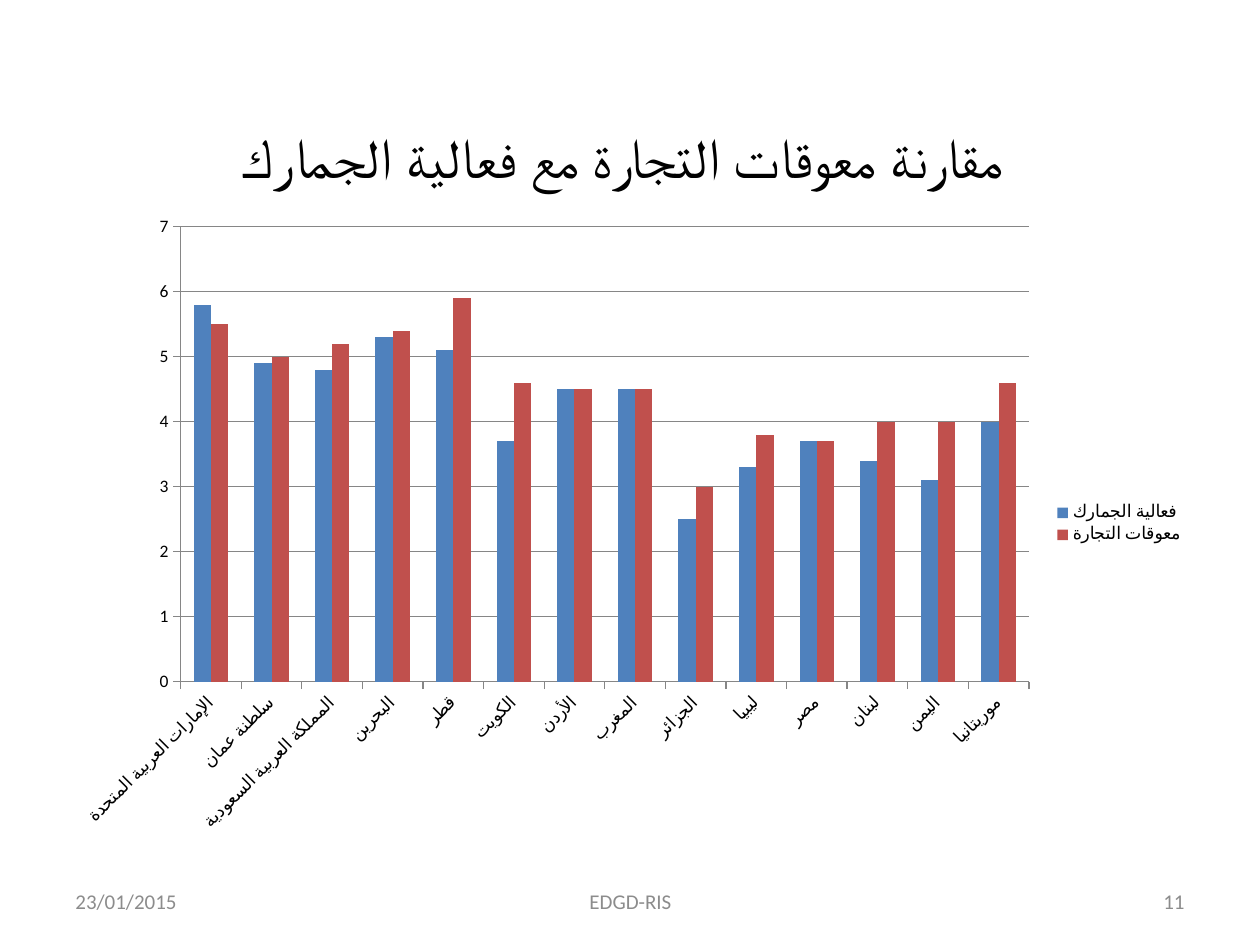
from dataclasses import dataclass

from pptx import Presentation
from pptx.chart.data import CategoryChartData
from pptx.dml.color import RGBColor
from pptx.enum.chart import XL_CHART_TYPE, XL_LEGEND_POSITION, XL_TICK_MARK
from pptx.enum.text import MSO_ANCHOR, PP_ALIGN
from pptx.util import Emu, Pt

COLUMNS = XL_CHART_TYPE.COLUMN_CLUSTERED
LEGEND_RIGHT = XL_LEGEND_POSITION.RIGHT
TICK_OUT = XL_TICK_MARK.OUTSIDE
MIDDLE, BOTTOM = MSO_ANCHOR.MIDDLE, MSO_ANCHOR.BOTTOM
LEFT, CENTER, RIGHT = PP_ALIGN.LEFT, PP_ALIGN.CENTER, PP_ALIGN.RIGHT

PX_PER_INCH = 126
FONT = "Calibri"
COLORS = {
    "text": "000000",
    "footer": "8C8C8C",
    "axis": "868686",
    "customs": "4F81BD",
    "barriers": "C0504D",
}


@dataclass(frozen=True)
class Label:
    text: str
    x: int
    y: int
    w: int
    h: int
    align: PP_ALIGN
    size: int = 12
    color: str = "footer"
    anchor: MSO_ANCHOR = MIDDLE


@dataclass(frozen=True)
class Series:
    name: str
    color: str
    values: tuple[float, ...]


FOOTER_Y, FOOTER_H = 876, 50
LABELS = (
    Label("مقارنة معوقات التجارة مع فعالية الجمارك ", 63, 38, 1134, 158,
          CENTER, 32, "text", BOTTOM),
    Label("23/01/2015", 63, FOOTER_Y, 294, FOOTER_H, LEFT),
    Label("EDGD-RIS", 431, FOOTER_Y, 399, FOOTER_H, CENTER),
    Label("11", 903, FOOTER_Y, 294, FOOTER_H, RIGHT),
)

COUNTRIES = (
    "الإمارات العربية المتحدة", "سلطنة عمان", "المملكة العربية السعودية",
    "البحرين", "قطر", "الكويت", "الأردن", "المغرب", "الجزائر", "ليبيا",
    "مصر", "لبنان", "اليمن", "موريتانيا",
)
SERIES = (
    Series("فعالية الجمارك", "customs",
           (5.8, 4.9, 4.8, 5.3, 5.1, 3.7, 4.5, 4.5, 2.5, 3.3, 3.7, 3.4, 3.1, 4)),
    Series("معوقات التجارة", "barriers",
           (5.5, 5, 5.2, 5.4, 5.9, 4.6, 4.5, 4.5, 3, 3.8, 3.7, 4, 4, 4.6)),
)


def px(n: int) -> Emu:
    return Emu(round(n * 914400 / PX_PER_INCH))


def rgb(name: str) -> RGBColor:
    return RGBColor.from_string(COLORS[name])


def style_font(font, size: int, color: str) -> None:
    font.name = FONT
    font.size = Pt(size)
    font.color.rgb = rgb(color)


def add_label(slide, label: Label) -> None:
    box = slide.shapes.add_textbox(px(label.x), px(label.y), px(label.w), px(label.h))
    tf = box.text_frame
    tf.word_wrap = True
    tf.vertical_anchor = label.anchor
    tf.text = label.text
    p = tf.paragraphs[0]
    p.alignment = label.align
    style_font(p.runs[0].font, label.size, label.color)


def style_line(line) -> None:
    line.color.rgb = rgb("axis")
    line.width = Pt(0.75)


def add_country_chart(slide) -> None:
    data = CategoryChartData()
    data.categories = COUNTRIES
    for series in SERIES:
        data.add_series(series.name, series.values)
    chart = slide.shapes.add_chart(
        COLUMNS, px(63), px(204), px(1134), px(640), data).chart
    style_font(chart.font, 10, "text")
    chart.has_title = False
    chart.has_legend = True
    chart.legend.position = LEGEND_RIGHT
    chart.legend.include_in_layout = False

    plot = chart.plots[0]
    plot.gap_width = 150
    plot.overlap = 0
    plot.vary_by_categories = False
    for bars, series in zip(plot.series, SERIES):
        bars.format.fill.solid()
        bars.format.fill.fore_color.rgb = rgb(series.color)

    for axis in (chart.category_axis, chart.value_axis):
        axis.major_tick_mark = TICK_OUT
        style_line(axis.format.line)
    value_axis = chart.value_axis
    value_axis.minimum_scale, value_axis.maximum_scale = 0, 7
    value_axis.major_unit = 1
    value_axis.has_major_gridlines = True
    style_line(value_axis.major_gridlines.format.line)


def main() -> None:
    prs = Presentation()
    prs.slide_width, prs.slide_height = px(1260), px(945)
    slide = prs.slides.add_slide(prs.slide_layouts[6])
    for label in LABELS:
        add_label(slide, label)
    add_country_chart(slide)
    prs.save("out.pptx")


if __name__ == "__main__":
    main()
